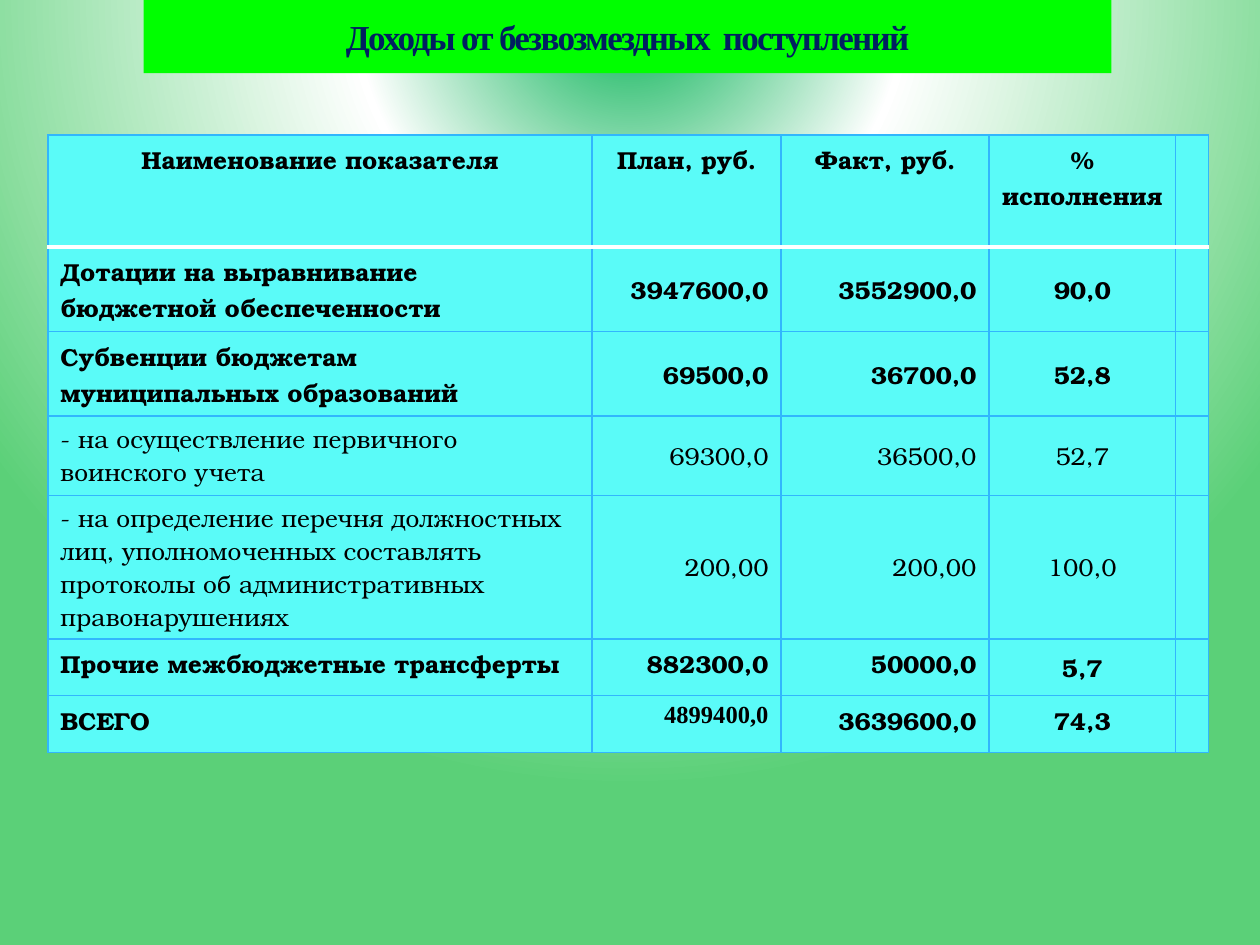
from pptx import Presentation
from pptx.dml.color import RGBColor
from pptx.enum.text import MSO_ANCHOR, PP_ALIGN
from pptx.oxml import parse_xml
from pptx.util import Inches, Pt

LEFT, MID, RIGHT = PP_ALIGN.LEFT, PP_ALIGN.CENTER, PP_ALIGN.RIGHT
TOP, CENTER = MSO_ANCHOR.TOP, MSO_ANCHOR.MIDDLE
NS = ('xmlns:a="http://schemas.openxmlformats.org/drawingml/2006/main" '
      'xmlns:p="http://schemas.openxmlformats.org/presentationml/2006/main"')

TITLE = "Доходы от безвозмездных  поступлений"
HEAD = ("Наименование показателя", "План, руб.", "Факт, руб.", "% исполнения", "")
ROWS = [
    ("Дотации на выравнивание бюджетной обеспеченности",
     "3947600,0", "3552900,0", "90,0", ""),
    ("Субвенции бюджетам муниципальных образований",
     "69500,0", "36700,0", "52,8", ""),
    ("- на осуществление первичного воинского учета",
     "69300,0", "36500,0", "52,7", ""),
    ("- на определение перечня должностных лиц, уполномоченных составлять "
     "протоколы об административных правонарушениях",
     "200,00", "200,00", "100,0", ""),
    ("Прочие межбюджетные трансферты", "882300,0", "50000,0", "5,7", ""),
    ("ВСЕГО", "4899400,0", "3639600,0", "74,3", ""),
]
WIDTHS = (4.32, 1.5, 1.65, 1.48, 0.26)
HEIGHTS = (0.89, 0.63, 0.63, 0.63, 0.89, 0.45, 0.45)
ALIGNS = (LEFT, RIGHT, RIGHT, MID, MID)
PLAIN = (3, 4)
MIDDLE = {(r, c) for r in range(1, 5) for c in (1, 2, 3)} | {(5, 3)}
SERIF = {(6, 1)}
STOPS = ((0, "00B050"), (35, "FFFFFF"), (100, "5BD078"))
CYAN, BLUE, WHITE = "5AFBF8", "31B6FD", "FFFFFF"
THIN, RULE = (BLUE, 1), (WHITE, 3)
BODY = {"name": "TeX Gyre Bonum", "size": Pt(14), "bold": True}
HEADING = {"name": "Times New Roman", "size": Pt(20), "bold": True}


def paint(fill, color):
    """Fill with one solid hex colour."""
    fill.solid()
    fill.fore_color.rgb = RGBColor.from_string(color)


def write(frame, text, align, color, form):
    """Write one formatted paragraph and return its run."""
    para = frame.paragraphs[0]
    para.alignment = align
    run = para.add_run()
    run.text = text
    for key, value in form.items():
        setattr(run.font, key, value)
    paint(run.font.fill, color)
    return run


def edge(cell, lines):
    """Put borders on a cell from (side, colour, points) triples."""
    props = cell._tc.get_or_add_tcPr()
    for i, (side, color, width) in enumerate(lines):
        props.insert(i, parse_xml(
            f'<a:ln{side} {NS} w="{Pt(width)}"><a:solidFill>'
            f'<a:srgbClr val="{color}"/></a:solidFill></a:ln{side}>'))


def backdrop(slide):
    """Give the slide its radial gradient."""
    stops = "".join(f'<a:gs pos="{at * 1000}"><a:srgbClr val="{color}"/></a:gs>'
                    for at, color in STOPS)
    slide.element.cSld.insert(0, parse_xml(
        f'<p:bg {NS}><p:bgPr><a:gradFill><a:gsLst>{stops}</a:gsLst>'
        '<a:path path="circle"><a:fillToRect l="50000" t="-80000" r="50000" '
        'b="180000"/></a:path></a:gradFill><a:effectLst/></p:bgPr></p:bg>'))


def heading(slide):
    """Place and format the title."""
    title = slide.shapes.title
    title.left, title.top = Inches(1.14), Inches(0)
    title.width, title.height = Inches(7.68), Inches(0.58)
    paint(title.fill, "00FF00")
    title.text_frame.vertical_anchor = CENTER
    run = write(title.text_frame, TITLE, MID, "002060", HEADING)
    props = run.font._element
    props.set("spc", "-100")
    props.insert(0, parse_xml(
        f'<a:ln {NS} w="{Pt(0.25)}"><a:solidFill><a:srgbClr val="AFCCDE">'
        '<a:alpha val="25000"/></a:srgbClr></a:solidFill></a:ln>'))


def grid(slide):
    """Build the income table."""
    table = slide.shapes.add_table(
        len(HEIGHTS), len(WIDTHS), Inches(0.38), Inches(1.07),
        Inches(sum(WIDTHS)), Inches(sum(HEIGHTS))).table
    table.horz_banding = False
    for col, width in zip(table.columns, WIDTHS):
        col.width = Inches(width)
    for row, height in zip(table.rows, HEIGHTS):
        row.height = Inches(height)
    for r, texts in enumerate([HEAD] + ROWS):
        for c, text in enumerate(texts):
            cell = table.cell(r, c)
            paint(cell.fill, CYAN)
            edge(cell, [("L", *THIN), ("R", *THIN),
                        ("T", *(RULE if r == 1 else THIN)),
                        ("B", *(RULE if r == 0 else THIN))])
            cell.vertical_anchor = CENTER if (r, c) in MIDDLE else TOP
            if text:
                form = BODY | {"bold": r not in PLAIN}
                if (r, c) in SERIF:
                    form["name"] = HEADING["name"]
                write(cell.text_frame, text, ALIGNS[c] if r else MID, "000000", form)


def main():
    """Build and save the slide."""
    deck = Presentation()
    deck.slide_width, deck.slide_height = Inches(10), Inches(7.5)
    slide = deck.slides.add_slide(deck.slide_layouts[5])
    backdrop(slide)
    grid(slide)
    heading(slide)
    deck.save("out.pptx")


if __name__ == "__main__":
    main()
